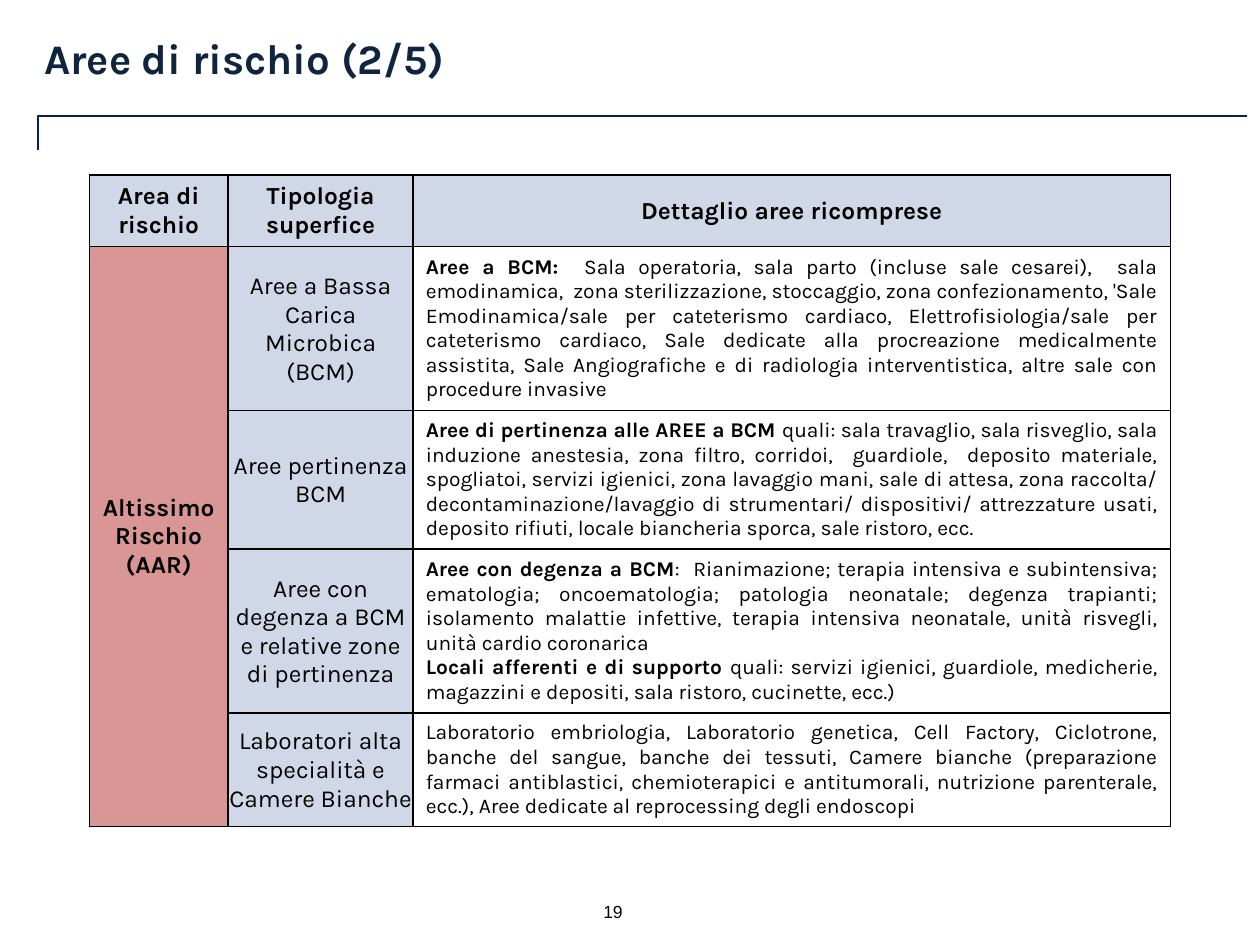
from lxml import etree
from pptx import Presentation
from pptx.dml.color import RGBColor
from pptx.enum import shapes, text
from pptx.oxml.ns import qn
from pptx.util import Inches, Pt

BLACK = RGBColor(0x00, 0x00, 0x00)
NAVY = RGBColor(0x00, 0x20, 0x60)
TITLE_BLUE = RGBColor(0x0F, 0x24, 0x3E)
PALE_BLUE = RGBColor(0xD0, 0xD8, 0xE8)
RISK_RED = RGBColor(0xD9, 0x96, 0x94)
CENTER = text.PP_ALIGN.CENTER
JUSTIFY = text.PP_ALIGN.JUSTIFY

COL_WIDTHS = [1.1, 1.47, 6.01]
ROW_HEIGHTS = [0.56, 1.3, 1.1, 1.3, 0.9]
HEADERS = ["Area di rischio", "Tipologia superfice", "Dettaglio aree ricomprese"]
RISK_LEVEL = ["Altissimo Rischio", "(AAR)"]
AREAS = [
    ("Aree a Bassa Carica Microbica (BCM)", [
        ("Aree a BCM: ",
         " Sala operatoria, sala parto (incluse sale cesarei),  sala emodinamica,  zona "
         "sterilizzazione, stoccaggio, zona confezionamento, 'Sale Emodinamica/sale per "
         "cateterismo cardiaco, Elettrofisiologia/sale per cateterismo cardiaco, Sale dedicate "
         "alla procreazione medicalmente assistita, Sale Angiografiche e di radiologia "
         "interventistica, altre sale con procedure invasive")]),
    ("Aree pertinenza BCM", [
        ("Aree di pertinenza alle AREE a BCM ",
         "quali: sala travaglio, sala risveglio, sala induzione anestesia, zona filtro, "
         "corridoi,  guardiole,  deposito materiale, spogliatoi, servizi igienici, zona lavaggio "
         "mani, sale di attesa, zona raccolta/ decontaminazione/lavaggio di strumentari/ "
         "dispositivi/ attrezzature usati, deposito rifiuti, locale biancheria sporca, sale "
         "ristoro, ecc.")]),
    ("Aree con degenza a BCM e relative zone di pertinenza", [
        ("Aree con degenza a BCM",
         ":  Rianimazione; terapia intensiva e subintensiva; ematologia; oncoematologia; "
         "patologia neonatale; degenza trapianti; isolamento malattie infettive, terapia "
         "intensiva neonatale, unità risvegli, unità cardio coronarica"),
        ("Locali afferenti e di supporto ",
         "quali: servizi igienici, guardiole, medicherie, magazzini e depositi, sala ristoro, "
         "cucinette, ecc.)")]),
    ("Laboratori alta specialità e Camere Bianche", [
        ("",
         "Laboratorio embriologia, Laboratorio genetica, Cell Factory, Ciclotrone, banche del "
         "sangue, banche dei tessuti, Camere bianche (preparazione farmaci antiblastici, "
         "chemioterapici e antitumorali, nutrizione parenterale, ecc.), Aree dedicate al "
         "reprocessing degli endoscopi")]),
]


def format_run(r, size, color=BLACK, bold=False, name="Karla"):
    r.font.name = name
    r.font.size = Pt(size)
    r.font.bold = bold
    r.font.color.rgb = color


def write_paragraphs(tf, paragraphs, size, align):
    for i, parts in enumerate(paragraphs):
        p = tf.paragraphs[0] if i == 0 else tf.add_paragraph()
        p.alignment = align
        for content, bold in parts:
            if content:
                r = p.add_run()
                r.text = content
                format_run(r, size, bold=bold)


def set_borders(cell):
    tc_pr = cell._tc.get_or_add_tcPr()
    for i, side in enumerate(("lnL", "lnR", "lnT", "lnB")):
        ln = etree.Element(qn(f"a:{side}"), w=str(Pt(1)))
        fill = etree.SubElement(ln, qn("a:solidFill"))
        etree.SubElement(fill, qn("a:srgbClr"), val=str(BLACK))
        tc_pr.insert(i, ln)


def style_cell(cell, fill=None):
    cell.vertical_anchor = text.MSO_ANCHOR.MIDDLE
    if fill is None:
        cell.fill.background()
    else:
        cell.fill.solid()
        cell.fill.fore_color.rgb = fill
    set_borders(cell)


def add_title(s, left, top, width, height):
    tf = s.shapes.add_textbox(left, top, width, height).text_frame
    tf.word_wrap = True
    tf.margin_left = tf.margin_right = tf.margin_bottom = 0
    tf.margin_top = Inches(0.04)
    tf.text = "Aree di rischio (2/5)"
    p = tf.paragraphs[0]
    p.line_spacing = 0.85
    format_run(p.runs[0], 24, TITLE_BLUE, True)


def add_title_rule(s, left, top, width, height):
    rule = s.shapes.add_connector(
        shapes.MSO_CONNECTOR.ELBOW, left + width, top, left, top + height)
    rule._element.spPr.find(qn("a:prstGeom")).set("prst", "bentConnector2")
    rule.line.color.rgb = NAVY
    rule.line.width = Pt(1)
    etree.SubElement(rule._element.spPr, qn("a:effectLst"))


def add_risk_table(s, left, top, width, height):
    table = s.shapes.add_table(
        len(ROW_HEIGHTS), len(COL_WIDTHS), left, top, width, height).table
    for col, w in zip(table.columns, COL_WIDTHS):
        col.width = Inches(w)
    for row, h in zip(table.rows, ROW_HEIGHTS):
        row.height = Inches(h)

    for c, header in enumerate(HEADERS):
        cell = table.cell(0, c)
        style_cell(cell, PALE_BLUE)
        write_paragraphs(cell.text_frame, [[(header, True)]], 14, CENTER)

    for r, (area, details) in enumerate(AREAS, 1):
        style_cell(table.cell(r, 0), RISK_RED)
        kind, detail = table.cell(r, 1), table.cell(r, 2)
        style_cell(kind, PALE_BLUE)
        kind.margin_left = kind.margin_right = kind.margin_top = Inches(0.01)
        kind.margin_bottom = 0
        write_paragraphs(kind.text_frame, [[(area, False)]], 14, CENTER)
        style_cell(detail)
        write_paragraphs(
            detail.text_frame,
            [[(lead, True), (body, False)] for lead, body in details], 12, JUSTIFY)

    risk = table.cell(1, 0)
    risk.merge(table.cell(len(AREAS), 0))
    write_paragraphs(risk.text_frame, [[(line, True)] for line in RISK_LEVEL], 14, CENTER)


def add_page_number(s, left, top, width, height):
    tf = s.shapes.add_textbox(left, top, width, height).text_frame
    tf.word_wrap = True
    tf.text = "19"
    format_run(tf.paragraphs[0].runs[0], 10, name="Arial")


def main():
    prs = Presentation()
    prs.slide_width, prs.slide_height = Inches(10), Inches(7.5)
    s = prs.slides.add_slide(prs.slide_layouts[6])
    add_page_number(s, Inches(4.69), Inches(7.1), Inches(0.47), Inches(0.27))
    add_title_rule(s, Inches(0.3), Inches(0.92), Inches(9.6), Inches(0.27))
    add_title(s, Inches(0.35), Inches(0.28), Inches(9), Inches(0.5))
    add_risk_table(s, Inches(0.71), Inches(1.39),
                   Inches(sum(COL_WIDTHS)), Inches(sum(ROW_HEIGHTS)))
    prs.save("out.pptx")


if __name__ == "__main__":
    main()
